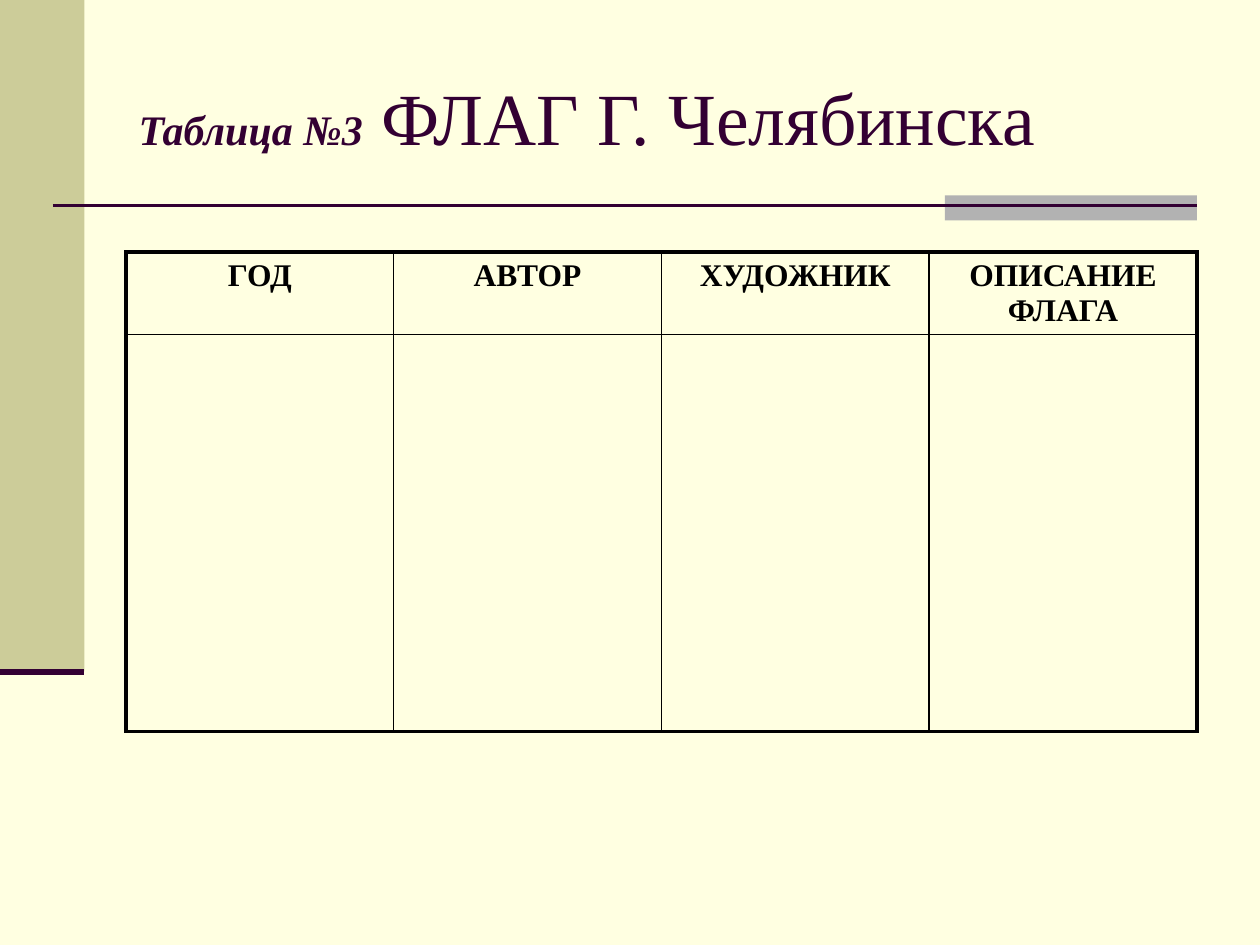
from dataclasses import dataclass

from lxml.etree import SubElement
from pptx import Presentation
from pptx.dml.color import RGBColor
from pptx.enum.shapes import MSO_CONNECTOR as Connector, MSO_SHAPE as Shape
from pptx.enum.text import MSO_ANCHOR as Anchor, PP_ALIGN as Align
from pptx.oxml.ns import qn
from pptx.util import Inches, Pt

FONT = "Times New Roman"
PLUM = "330033"
BLACK = "000000"
THIN, THICK = 1, 2.25
HEADINGS = ["ГОД", "АВТОР", "ХУДОЖНИК", "ОПИСАНИЕ ФЛАГА"]
ROW_HEIGHTS = [0.6, 3.15]
TABLE_WIDTH = 8.5


@dataclass
class Band:
    left: float
    top: float
    width: float
    height: float
    color: str


@dataclass
class Rule:
    left: float
    right: float
    top: float
    weight: float


BANDS = [
    Band(0, 0, 0.67, 5.33, "CCCC99"),
    Band(7.5, 1.55, 2, 0.2, "B2B2B2"),
]
RULES = [Rule(0.42, 9.5, 1.63, 1.5), Rule(0, 0.67, 5.33, 3.5)]


def rgb(color: str) -> RGBColor:
    return RGBColor.from_string(color)


def draw_band(page, band: Band) -> None:
    box = page.shapes.add_shape(
        Shape.RECTANGLE, Inches(band.left), Inches(band.top),
        Inches(band.width), Inches(band.height),
    )
    box.shadow.inherit = False
    box.fill.solid()
    box.fill.fore_color.rgb = rgb(band.color)
    box.line.fill.background()


def draw_rule(page, rule: Rule) -> None:
    line = page.shapes.add_connector(
        Connector.STRAIGHT, Inches(rule.left), Inches(rule.top),
        Inches(rule.right), Inches(rule.top),
    )
    line.line.color.rgb = rgb(PLUM)
    line.line.width = Pt(rule.weight)
    SubElement(line._element.spPr, qn("a:effectLst"))


def add_span(para, text: str, *, size: float, color: str,
             bold: bool = False, italic: bool = False) -> None:
    span = para.add_run()
    span.text = text
    span.font.name = FONT
    span.font.size = Pt(size)
    span.font.bold = bold
    span.font.italic = italic
    span.font.color.rgb = rgb(color)


def set_borders(cell, weights: dict[str, float]) -> None:
    properties = cell._tc.get_or_add_tcPr()
    for side, weight in weights.items():
        border = SubElement(properties, qn(f"a:ln{side}"), w=str(Pt(weight)))
        fill = SubElement(border, qn("a:solidFill"))
        SubElement(fill, qn("a:srgbClr"), val=BLACK)


def draw_title(page) -> None:
    title = page.shapes.title
    title.left, title.top = Inches(1), Inches(0.3)
    title.width, title.height = Inches(8.5), Inches(1.25)
    title.text_frame.vertical_anchor = Anchor.MIDDLE
    para = title.text_frame.paragraphs[0]
    para.alignment = Align.LEFT
    add_span(para, "Таблица №3", size=24, color=PLUM, bold=True, italic=True)
    add_span(para, " ФЛАГ Г. Челябинска", size=42, color=PLUM)


def draw_table(page) -> None:
    last_row, last_column = len(ROW_HEIGHTS) - 1, len(HEADINGS) - 1
    table = page.shapes.add_table(
        len(ROW_HEIGHTS), len(HEADINGS), Inches(1), Inches(2),
        Inches(TABLE_WIDTH), Inches(sum(ROW_HEIGHTS)),
    ).table
    table.first_row = False
    table.horz_banding = False
    for column in table.columns:
        column.width = Inches(TABLE_WIDTH / len(HEADINGS))
    for r, height in enumerate(ROW_HEIGHTS):
        table.rows[r].height = Inches(height)
        for c, heading in enumerate(HEADINGS):
            cell = table.cell(r, c)
            set_borders(cell, {
                "L": THICK if c == 0 else THIN,
                "R": THICK if c == last_column else THIN,
                "T": THICK if r == 0 else THIN,
                "B": THICK if r == last_row else THIN,
            })
            cell.fill.background()
            if r == 0:
                para = cell.text_frame.paragraphs[0]
                para.alignment = Align.CENTER
                para.space_before = Pt(3.6)
                add_span(para, heading, size=18, color=BLACK, bold=True)


def main() -> None:
    deck = Presentation()
    deck.slide_width, deck.slide_height = Inches(10), Inches(7.5)
    page = deck.slides.add_slide(deck.slide_layouts.get_by_name("Title Only"))
    page.background.fill.solid()
    page.background.fill.fore_color.rgb = rgb("FFFFE1")
    for band in BANDS:
        draw_band(page, band)
    for rule in RULES:
        draw_rule(page, rule)
    draw_title(page)
    draw_table(page)
    deck.save("out.pptx")


if __name__ == "__main__":
    main()
